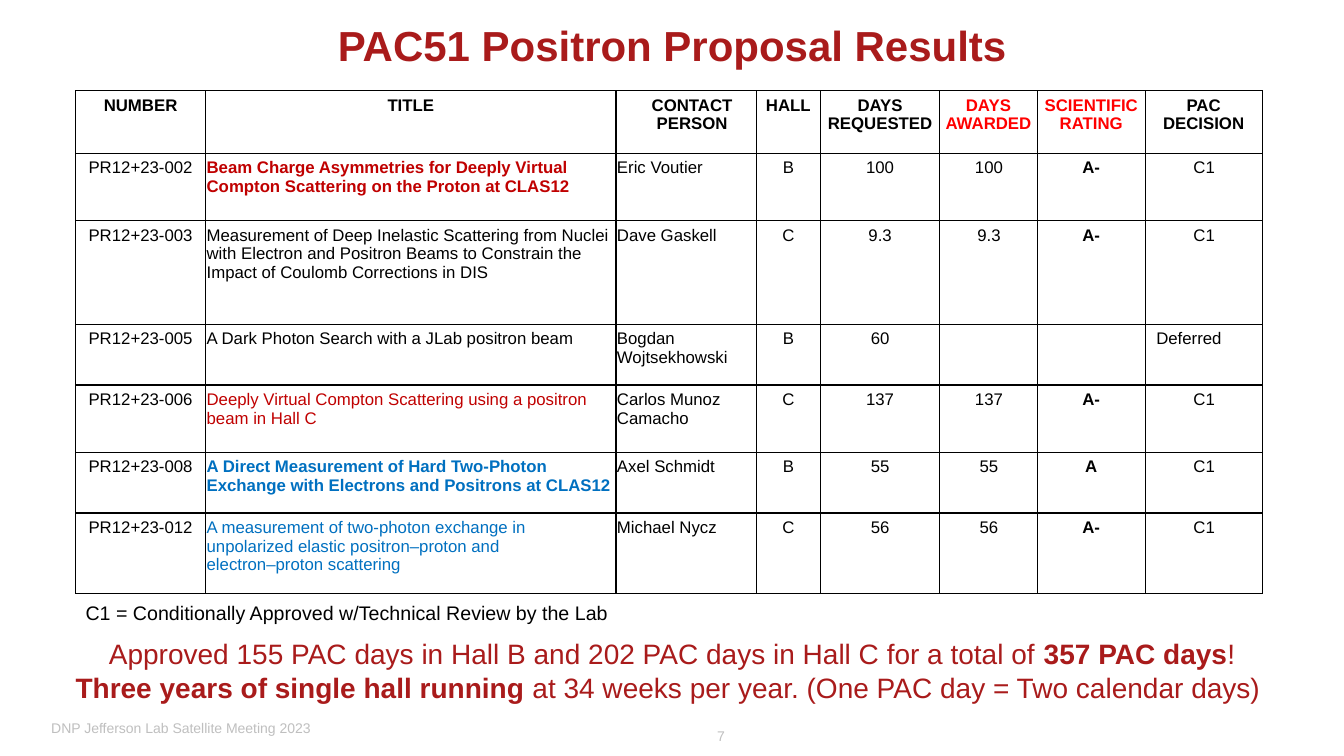
from dataclasses import dataclass

from lxml.etree import SubElement
from pptx import Presentation
from pptx.dml.color import RGBColor
from pptx.enum.text import MSO_ANCHOR, MSO_AUTO_SIZE, PP_ALIGN
from pptx.oxml.ns import qn
from pptx.util import Inches, Pt

COLORS = {"black": "000000", "maroon": "A91B1B", "red": "FF0000",
          "crimson": "C00000", "blue": "0070C0", "gray": "BFBFBF"}
COLUMN_WIDTHS = [1.29, 4.07, 1.39, 0.64, 1.18, 0.97, 1.07, 1.16]
HEADER_HEIGHT = 0.62
HEADERS = ["NUMBER", "TITLE", "CONTACT PERSON", "HALL", "DAYS\nREQUESTED",
           "DAYS\nAWARDED", "SCIENTIFIC\nRATING", "PAC DECISION"]
TITLE, CONTACT, AWARDED, RATING, DECISION = 1, 2, 5, 6, 7


@dataclass
class Proposal:
    number: str
    title: str
    contact: str
    hall: str
    requested: str
    awarded: str
    rating: str
    decision: str
    height: float
    color: str = "black"
    bold: bool = False

    def values(self) -> list[str]:
        return [self.number, self.title, self.contact, self.hall,
                self.requested, self.awarded, self.rating, self.decision]


@dataclass
class Span:
    text: str
    bold: bool = False


@dataclass
class TextBox:
    left: float
    top: float
    width: float
    height: float
    paragraphs: list[list[Span]]
    size: float
    color: str
    align: PP_ALIGN = PP_ALIGN.LEFT
    anchor: MSO_ANCHOR = MSO_ANCHOR.TOP
    inset: bool = True
    line_spacing: float = 1.0


PROPOSALS = [
    Proposal("PR12+23-002", "Beam Charge Asymmetries for Deeply Virtual Compton "
             "Scattering on the Proton at CLAS12", "Eric Voutier",
             "B", "100", "100", "A-", "C1", 0.67, "crimson", True),
    Proposal("PR12+23-003", "Measurement of Deep Inelastic Scattering from Nuclei "
             "with Electron and Positron Beams to Constrain the Impact of Coulomb "
             "Corrections in DIS", "Dave Gaskell",
             "C", "9.3", "9.3", "A-", "C1", 1.03),
    Proposal("PR12+23-005", "A Dark Photon Search with a JLab positron beam",
             "Bogdan Wojtsekhowski", "B", "60", "", "", "Deferred", 0.6),
    Proposal("PR12+23-006", "Deeply Virtual Compton Scattering using a positron "
             "beam in Hall C", "Carlos Munoz Camacho",
             "C", "137", "137", "A-", "C1", 0.67, "crimson"),
    Proposal("PR12+23-008", "A Direct Measurement of Hard Two-Photon Exchange with "
             "Electrons and Positrons at CLAS12", "Axel Schmidt",
             "B", "55", "55", "A", "C1", 0.6, "blue", True),
    Proposal("PR12+23-012", "A measurement of two-photon exchange in unpolarized "
             "elastic positron–proton and\nelectron–proton scattering",
             "Michael Nycz", "C", "56", "56", "A-", "C1", 0.8, "blue"),
]

TEXT_BOXES = [
    # Page number and footer
    TextBox(6.88, 7.24, 0.31, 0.17, [[Span("7")]], 10, "gray",
            PP_ALIGN.RIGHT, inset=False, line_spacing=0.9),
    TextBox(0.41, 7.12, 4.22, 0.2,
            [[Span("DNP Jefferson Lab Satellite Meeting 2023")]], 10, "gray",
            anchor=MSO_ANCHOR.MIDDLE),
    # Table legend
    TextBox(0.75, 5.91, 9.36, 0.64,
            [[Span("C1 = Conditionally Approved w/Technical Review by the Lab")]],
            14, "black"),
    # Summary
    TextBox(0, 6.27, 13.33, 0.77, [
        [Span("Approved 155 PAC days in Hall B and 202 PAC days in Hall C "
              "for a total of "), Span("357 PAC days", True), Span("!")],
        [Span("Three years of single hall running ", True),
         Span("at 34 weeks per year. (One PAC day = Two calendar days) ")],
    ], 20, "maroon", PP_ALIGN.CENTER),
]


def style_run(r, size: float, color: str, bold: bool = False) -> None:
    r.font.name = "Arial"
    r.font.size = Pt(size)
    r.font.bold = bold
    r.font.color.rgb = RGBColor.from_string(COLORS[color])


def add_text_box(slide, box: TextBox) -> None:
    sp = slide.shapes.add_textbox(Inches(box.left), Inches(box.top),
                                  Inches(box.width), Inches(box.height))
    tf = sp.text_frame
    tf.word_wrap = True
    tf.vertical_anchor = box.anchor
    if not box.inset:
        tf.margin_left = tf.margin_right = tf.margin_top = tf.margin_bottom = 0
    for i, spans in enumerate(box.paragraphs):
        p = tf.add_paragraph() if i else tf.paragraphs[0]
        p.alignment = box.align
        p.line_spacing = box.line_spacing
        for span in spans:
            r = p.add_run()
            r.text = span.text
            style_run(r, box.size, box.color, span.bold)


def add_borders(cell) -> None:
    tc_pr = cell._tc.get_or_add_tcPr()
    for side in ("lnL", "lnR", "lnT", "lnB"):
        ln = SubElement(tc_pr, qn(f"a:{side}"), w=str(Pt(0.96)))
        fill = SubElement(ln, qn("a:solidFill"))
        SubElement(fill, qn("a:srgbClr"), val=COLORS["black"])


def fill_cell(cell, text: str, align: PP_ALIGN, color: str, bold: bool,
              wide: bool = False) -> None:
    add_borders(cell)
    cell.fill.background()
    cell.margin_left = Inches(0.11 if wide else 0.01)
    cell.margin_right = Inches(0.1 if wide else 0.01)
    cell.margin_top = cell.margin_bottom = Inches(0.05)
    if not text:
        return
    p = cell.text_frame.paragraphs[0]
    p.text = text
    p.alignment = align
    for r in p.runs:
        style_run(r, 12, color, bold)


def add_proposal_table(slide) -> None:
    heights = [HEADER_HEIGHT] + [proposal.height for proposal in PROPOSALS]
    table = slide.shapes.add_table(
        len(heights), len(COLUMN_WIDTHS), Inches(0.75), Inches(0.9),
        Inches(sum(COLUMN_WIDTHS)), Inches(sum(heights))).table
    table.first_row = table.horz_banding = False
    for column, width in zip(table.columns, COLUMN_WIDTHS):
        column.width = Inches(width)
    for row, height in zip(table.rows, heights):
        row.height = Inches(height)

    # Header row
    for col, text in enumerate(HEADERS):
        color = "red" if col in (AWARDED, RATING) else "black"
        fill_cell(table.cell(0, col), text, PP_ALIGN.CENTER, color, True)
    contact = table.cell(0, CONTACT).text_frame.paragraphs[0]
    contact._p.get_or_add_pPr().set("marL", str(Inches(0.12)))

    # Proposal rows
    for row, proposal in enumerate(PROPOSALS, start=1):
        for col, text in enumerate(proposal.values()):
            left = col in (TITLE, CONTACT) or text == "Deferred"
            fill_cell(table.cell(row, col), text,
                      PP_ALIGN.LEFT if left else PP_ALIGN.CENTER,
                      proposal.color if col == TITLE else "black",
                      col == RATING or (col == TITLE and proposal.bold),
                      wide=col in (AWARDED, DECISION))


def add_title(slide, text: str) -> None:
    sp = slide.shapes.title
    sp.left, sp.top = Inches(1.67), Inches(0.12)
    sp.width, sp.height = Inches(10), Inches(0.64)
    tf = sp.text_frame
    tf.text = text
    tf.word_wrap = True
    tf.auto_size = MSO_AUTO_SIZE.NONE
    tf.vertical_anchor = MSO_ANCHOR.MIDDLE
    p = tf.paragraphs[0]
    p.alignment = PP_ALIGN.CENTER
    style_run(p.runs[0], 30, "maroon", True)


def main() -> None:
    prs = Presentation()
    prs.slide_width, prs.slide_height = Inches(13.33), Inches(7.5)
    slide = prs.slides.add_slide(prs.slide_layouts[5])
    add_title(slide, "PAC51 Positron Proposal Results")
    add_proposal_table(slide)
    for box in TEXT_BOXES:
        add_text_box(slide, box)
    prs.save("out.pptx")


if __name__ == "__main__":
    main()
